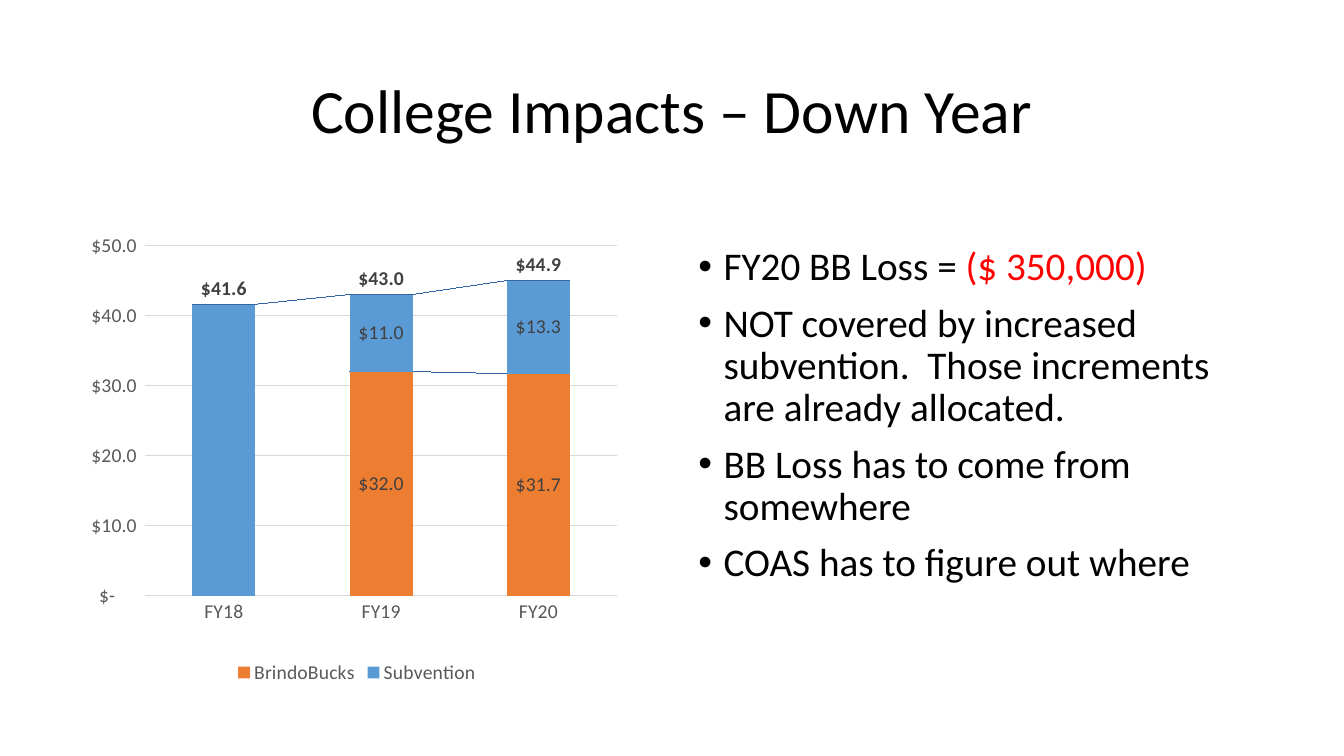
"""Build the College Impacts slide: a stacked chart with totals beside four bullets."""
from lxml import etree
from pptx import Presentation
from pptx import util as u
from pptx.chart.data import CategoryChartData
from pptx.dml.color import RGBColor
from pptx.enum import chart as ch, text as tx
from pptx.oxml import parse_xml
from pptx.oxml.ns import qn

THEME = {
    "font": "Calibri", "title": 44, "body": 28, "label": 14,
    "ink": "000000", "loss": "FF0000", "axis": "595959", "value": "404040",
    "grid": "D9D9D9", "link": "3465A4",
}
TITLE = "College Impacts – Down Year"
POINTS = [
    [("FY20 BB Loss = ", "ink"), ("($ 350,000)", "loss")],
    [("NOT covered by increased subvention.  Those increments are already allocated.", "ink")],
    [("BB Loss has to come from somewhere", "ink")],
    [("COAS has to figure out where", "ink")],
]
YEARS = ["FY18", "FY19", "FY20"]
STACKS = [
    ("BrindoBucks", (None, 32, 31.7), "ED7D31"),
    ("Subvention", (41.6, 11, 13.3), "5B9BD5"),
]
TOTALS = (41.6, 43, 44.9)
MONEY = '_("$"* #,##0.0_);_("$"* \\(#,##0.0\\);_("$"* "-"??_);_(@_)'
BOXES = {
    "title": (66, 28.8, 828, 104.4),
    "chart": (61.2, 144, 387.4, 347.8),
    "body": (491.8, 172.8, 408.2, 319),
}
PLOT = {"x": 0.11, "y": 0.09, "w": 0.87, "h": 0.72}


def assign(obj, vals):
    for key, val in vals.items():
        setattr(obj, key, val)


def style(font, size, tone, bold=False):
    assign(font, {"name": THEME["font"], "size": u.Pt(THEME[size]), "bold": bold})
    font.color.rgb = RGBColor.from_string(THEME[tone])


def stroke(line, tone):
    line.color.rgb = RGBColor.from_string(THEME[tone])
    line.width = u.Pt(0.75)


def node(tag, **attrs):
    elem = parse_xml(etree.tostring(etree.Element(qn(tag))))
    for key, val in attrs.items():
        elem.set(key, val)
    return elem


def nest(top, *kids):
    for kid in kids:
        top.append(kid)
    return top


def place(name):
    return [u.Pt(n) for n in BOXES[name]]


def write(slide, name, paras, anchor, form):
    frame = slide.shapes.add_textbox(*place(name)).text_frame
    assign(frame, {"word_wrap": True, "vertical_anchor": anchor})
    for i, runs in enumerate(paras):
        para = frame.add_paragraph() if i else frame.paragraphs[0]
        assign(para, form)
        for words, tone in runs:
            run = para.add_run()
            run.text = words
            style(run.font, name, tone)
    return frame


def bullet(para):
    props = para._p.get_or_add_pPr()
    props.set("marL", str(u.Pt(18)))
    props.set("indent", str(-u.Pt(18)))
    nest(props, node("a:buFont", typeface="Arial"), node("a:buChar", char="•"))


def label(series, tone="value", bold=False):
    tags = series.data_labels
    assign(tags, {"show_value": True, "number_format": MONEY, "number_format_is_linked": False})
    style(tags.font, "label", tone, bold)
    return tags


def split(chart):
    """Move the totals from the bars to a line plot on the same axes."""
    bars = chart._chartSpace.find(".//" + qn("c:barChart"))
    total = bars.findall(qn("c:ser"))[-1]
    for flag in total.findall(qn("c:invertIfNegative")):
        total.remove(flag)
    line = nest(node("c:lineChart"), node("c:grouping", val="standard"),
                node("c:varyColors", val="0"), total, node("c:marker", val="1"))
    axes = bars.findall(qn("c:axId"))
    nest(line, *(node("c:axId", val=a.get("val")) for a in axes))
    bars.addnext(line)
    ink = nest(node("a:solidFill"), node("a:srgbClr", val=THEME["link"]))
    edge = nest(node("a:ln", w=str(u.Pt(0.75))), ink)
    axes[0].addprevious(nest(node("c:serLines"), nest(node("c:spPr"), edge)))


def layout(chart):
    area = chart._chartSpace.find(".//" + qn("c:plotArea"))
    for old in area.findall(qn("c:layout")):
        area.remove(old)
    spot = nest(node("c:manualLayout"), node("c:layoutTarget", val="inner"),
                node("c:xMode", val="edge"), node("c:yMode", val="edge"),
                *(node("c:" + k, val=str(v)) for k, v in PLOT.items()))
    area.insert(0, nest(node("c:layout"), spot))


def draw(slide):
    data = CategoryChartData(number_format=MONEY)
    data.categories = YEARS
    for name, vals, _ in STACKS:
        data.add_series(name, vals)
    data.add_series("", TOTALS)
    chart = slide.shapes.add_chart(ch.XL_CHART_TYPE.COLUMN_STACKED, *place("chart"), data).chart
    assign(chart, {"has_title": False, "has_legend": True})
    style(chart.font, "label", "axis")
    assign(chart.plots[0], {"gap_width": 150, "overlap": 100, "vary_by_categories": False})
    split(chart)
    layout(chart)

    bars, line = chart.plots
    for series, (_, _, tone) in zip(bars.series, STACKS):
        series.format.fill.solid()
        series.format.fill.fore_color.rgb = RGBColor.from_string(tone)
        tags = label(series)
    blank = nest(node("c:dLbl"), node("c:idx", val="0"), node("c:delete", val="1"))
    tags._element.insert(0, blank)

    total = line.series[0]
    total.smooth = False
    total.format.line.fill.background()
    total.marker.style = ch.XL_MARKER_STYLE.NONE
    label(total, bold=True).position = ch.XL_LABEL_POSITION.ABOVE

    ticks = {"major_tick_mark": ch.XL_TICK_MARK.NONE, "minor_tick_mark": ch.XL_TICK_MARK.NONE}
    for axis in (chart.category_axis, chart.value_axis):
        assign(axis, ticks)
        style(axis.tick_labels.font, "label", "axis")
    stroke(chart.category_axis.format.line, "grid")
    scale = chart.value_axis
    assign(scale, {"minimum_scale": 0, "maximum_scale": 50, "major_unit": 10,
                   "has_major_gridlines": True})
    assign(scale.tick_labels, {"number_format": MONEY, "number_format_is_linked": False})
    scale.format.line.fill.background()
    stroke(scale.major_gridlines.format.line, "grid")

    key = chart.legend
    assign(key, {"position": ch.XL_LEGEND_POSITION.BOTTOM, "include_in_layout": False})
    style(key.font, "label", "axis")
    hide = nest(node("c:legendEntry"), node("c:idx", val=str(len(STACKS))),
                node("c:delete", val="1"))
    spot = key._element.find(qn("c:legendPos"))
    key._element.insert(0 if spot is None else 1, hide)


def main():
    deck = Presentation()
    assign(deck, {"slide_width": u.Pt(960), "slide_height": u.Pt(540)})
    slide = deck.slides.add_slide(deck.slide_layouts[6])
    write(slide, "title", [[(TITLE, "ink")]], tx.MSO_ANCHOR.MIDDLE,
          {"alignment": tx.PP_ALIGN.CENTER, "line_spacing": 0.9})
    draw(slide)
    body = write(slide, "body", POINTS, tx.MSO_ANCHOR.TOP,
                 {"line_spacing": 0.9, "space_before": u.Pt(10)})
    for para in body.paragraphs:
        bullet(para)
    deck.save("out.pptx")


if __name__ == "__main__":
    main()
